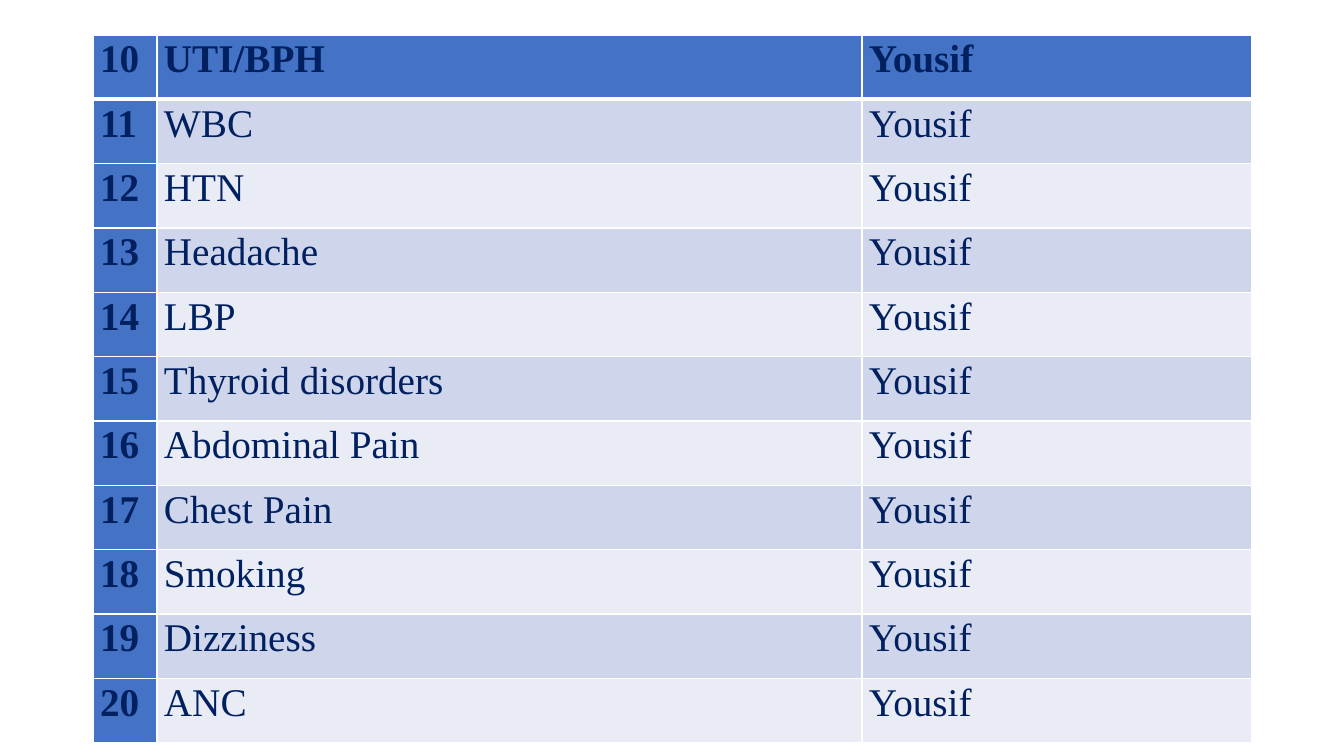
from dataclasses import dataclass

from lxml import etree
from pptx import Presentation
from pptx import util as u
from pptx.dml.color import RGBColor
from pptx.oxml import ns

EMU_PER_PX = 12192000 / 1344


@dataclass(frozen=True)
class Theme:
    font: str = "Times New Roman"
    size: int = 28
    ink: str = "002060"
    accent: str = "4472C4"
    bands: tuple[str, str] = ("E9EBF5", "CFD5EA")
    border: str = "FFFFFF"
    thin: int = 1
    thick: int = 3


@dataclass(frozen=True)
class Topic:
    number: int
    name: str
    presenter: str = "Yousif"


THEME = Theme()
FIRST_NUMBER = 10
TOPIC_NAMES = (
    "UTI/BPH", "WBC", "HTN", "Headache", "LBP", "Thyroid disorders",
    "Abdominal Pain", "Chest Pain", "Smoking", "Dizziness", "ANC",
)
TOPICS = [Topic(number, name) for number, name in enumerate(TOPIC_NAMES, FIRST_NUMBER)]

TABLE_LEFT, TABLE_TOP, TABLE_HEIGHT = 93, 35, 708
COLUMN_WIDTHS = (64, 705, 390)
CELL_FORMAT = {
    "margin_left": u.Inches(0.07),
    "margin_right": u.Inches(0.07),
    "margin_top": 0,
    "margin_bottom": 0,
}
PARAGRAPH_FORMAT = {"line_spacing": 1.07, "space_after": u.Pt(8)}


def px(length: float) -> u.Emu:
    return u.Emu(round(length * EMU_PER_PX))


def apply_format(target: object, values: dict) -> None:
    for name, value in values.items():
        setattr(target, name, value)


def set_borders(cell, widths: dict[str, int]) -> None:
    """Draw the cell's sides, keyed L, R, T, B in that order, in points."""
    properties = cell._tc.get_or_add_tcPr()
    for position, (side, width) in enumerate(widths.items()):
        line = etree.Element(ns.qn(f"a:ln{side}"), w=str(u.Pt(width)))
        fill = etree.SubElement(line, ns.qn("a:solidFill"))
        etree.SubElement(fill, ns.qn("a:srgbClr"), val=THEME.border)
        properties.insert(position, line)


def fill_cell(cell, content: str, row: int, column: int) -> None:
    emphasised = row == 0 or column == 0
    apply_format(cell, CELL_FORMAT)
    cell.fill.solid()
    color = THEME.accent if emphasised else THEME.bands[row % 2]
    cell.fill.fore_color.rgb = RGBColor.from_string(color)

    para = cell.text_frame.paragraphs[0]
    apply_format(para, PARAGRAPH_FORMAT)
    span = para.add_run()
    span.text = content
    apply_format(span.font, {
        "name": THEME.font, "size": u.Pt(THEME.size), "bold": emphasised,
    })
    span.font.color.rgb = RGBColor.from_string(THEME.ink)

    set_borders(cell, {
        "L": THEME.thin,
        "R": THEME.thin,
        "T": THEME.thick if row == 1 else THEME.thin,
        "B": THEME.thick if row == 0 else THEME.thin,
    })


def add_topic_table(page, topics: list[Topic]) -> None:
    table = page.shapes.add_table(
        len(topics), len(COLUMN_WIDTHS), px(TABLE_LEFT), px(TABLE_TOP),
        px(sum(COLUMN_WIDTHS)), px(TABLE_HEIGHT),
    ).table
    table.first_col = True
    for column, width in zip(table.columns, COLUMN_WIDTHS):
        column.width = px(width)
    for row, topic in enumerate(topics):
        table.rows[row].height = px(TABLE_HEIGHT / len(topics))
        for column, content in enumerate((str(topic.number), topic.name, topic.presenter)):
            fill_cell(table.cell(row, column), content, row, column)


def main() -> None:
    deck = Presentation()
    deck.slide_width, deck.slide_height = px(1344), px(756)
    page = deck.slides.add_slide(deck.slide_layouts.get_by_name("Blank"))
    add_topic_table(page, TOPICS)
    deck.save("out.pptx")


if __name__ == "__main__":
    main()
